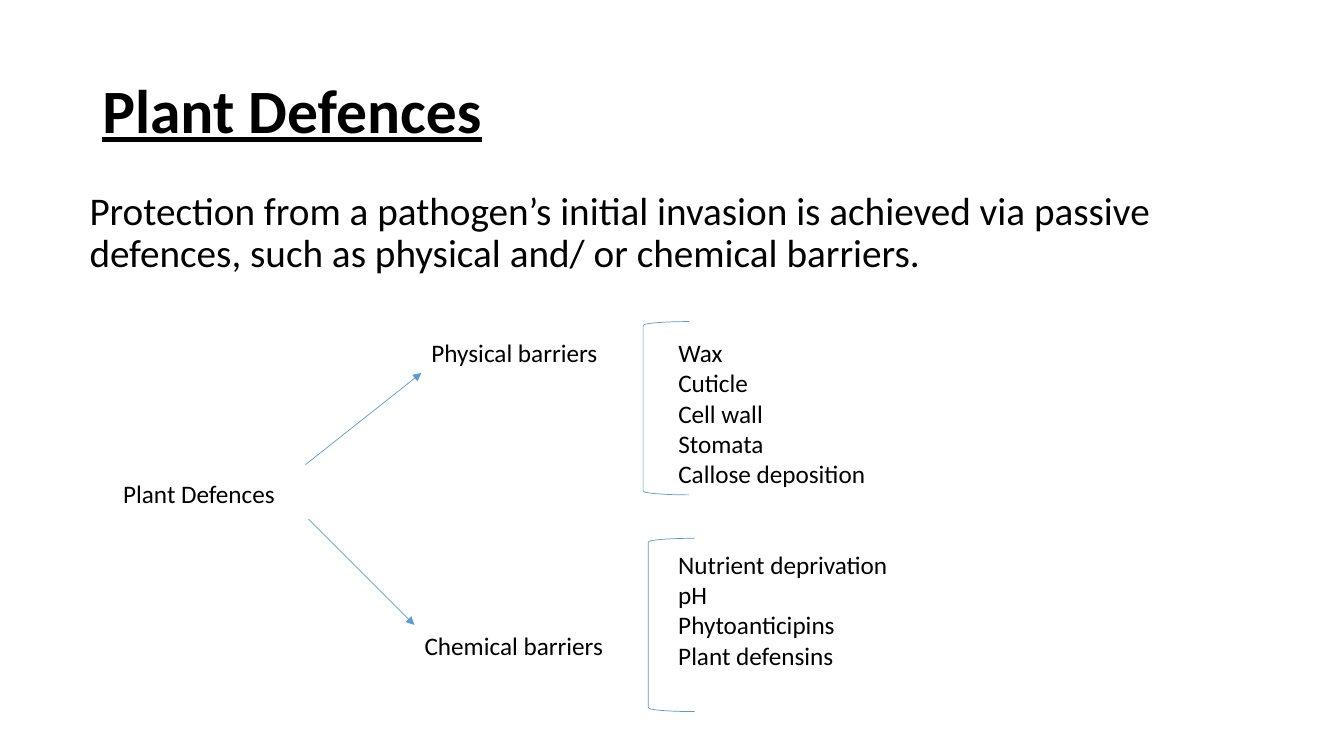
from pptx import Presentation
from pptx.dml.color import RGBColor
from pptx.enum.shapes import MSO_CONNECTOR, MSO_SHAPE
from pptx.enum.text import MSO_ANCHOR, MSO_AUTO_SIZE
from pptx.oxml.ns import qn
from pptx.util import Pt
from lxml.etree import SubElement

BLACK = RGBColor(0x00, 0x00, 0x00)
BLUE = RGBColor(0x5B, 0x9B, 0xD5)

prs = Presentation()
prs.slide_width, prs.slide_height = Pt(960), Pt(540)
s = prs.slides.add_slide(prs.slide_layouts[6])


def add_text(box, lines, size, font={}, para={}, frame={}):
    """Add a text box with one paragraph per line; the dicts hold extra format values."""
    tf = s.shapes.add_textbox(*map(Pt, box)).text_frame
    for name, value in {"word_wrap": True, **frame}.items():
        setattr(tf, name, value)
    for i, line in enumerate(lines):
        p = tf.add_paragraph() if i else tf.paragraphs[0]
        for name, value in para.items():
            setattr(p, name, value)
        r = p.add_run()
        r.text = line
        r.font.color.rgb = BLACK
        for name, value in {"name": "Calibri", "size": Pt(size), **font}.items():
            setattr(r.font, name, value)


add_text((66, 28.75, 828, 104.4), ["Plant Defences"], 44,
         font={"bold": True, "underline": True},
         para={"line_spacing": 0.9},
         frame={"vertical_anchor": MSO_ANCHOR.MIDDLE})
add_text((56.9, 133.2, 828, 342.7),
         ["Protection from a pathogen’s initial invasion is achieved via passive "
          "defences, such as physical and/ or chemical barriers."], 28,
         para={"line_spacing": 0.9, "space_before": Pt(10)})

# Tree labels and lists of barriers
labels = [
    ((80.9, 338.4, 124.3, 29.1), ["Plant Defences"]),
    ((301.1, 237.4, 134, 29.1), ["Physical barriers"]),
    ((296.2, 446.4, 143.3, 29.1), ["Chemical barriers"]),
    ((477.4, 237.4, 149.8, 116.6),
     ["Wax", "Cuticle", "Cell wall", "Stomata", "Callose deposition"]),
    ((477.4, 388.8, 165.6, 94.5),
     ["Nutrient deprivation", "pH", "Phytoanticipins", "Plant defensins"]),
]
for box, lines in labels:
    add_text(box, lines, 18,
             frame={"word_wrap": False, "auto_size": MSO_AUTO_SIZE.SHAPE_TO_FIT_TEXT})

# Arrows to the two kinds of barrier
for ends in [(218.2, 331.9, 301, 266.4), (220.3, 370.8, 296, 446.4)]:
    arrow = s.shapes.add_connector(MSO_CONNECTOR.STRAIGHT, *map(Pt, ends))
    arrow.line.color.rgb = BLUE
    arrow.line.width = Pt(0.5)
    SubElement(arrow.line._get_or_add_ln(), qn("a:tailEnd"), type="triangle")
    SubElement(arrow._element.spPr, qn("a:effectLst"))

# Brackets in front of the lists
for left, top in [(459.4, 229.7), (463, 384.5)]:
    bracket = s.shapes.add_shape(MSO_SHAPE.LEFT_BRACKET,
                                 Pt(left), Pt(top), Pt(33.1), Pt(123.8))
    bracket.shadow.inherit = False
    bracket.fill.background()
    bracket.line.color.rgb = BLUE
    bracket.line.width = Pt(0.5)

prs.save("out.pptx")
